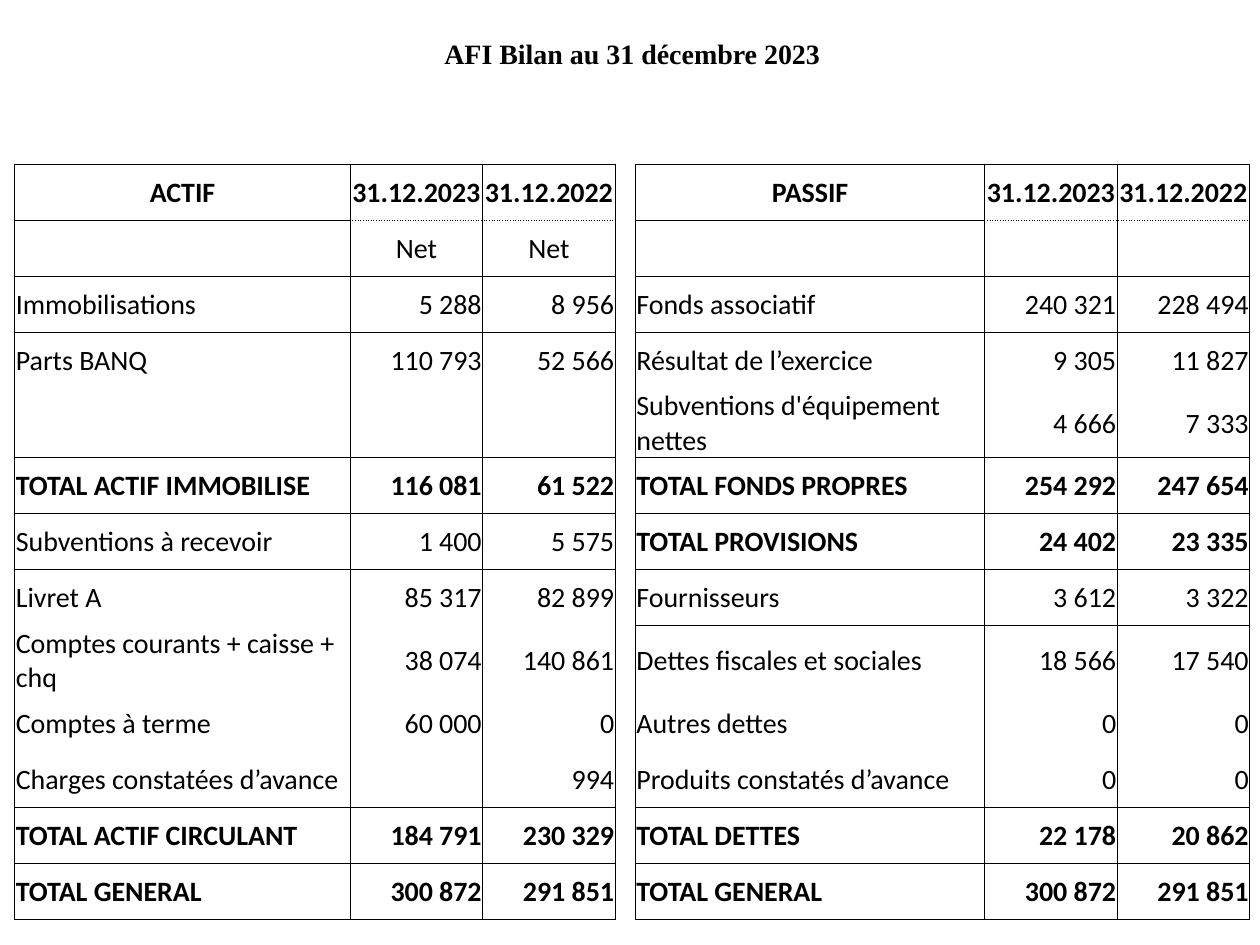
"""Build the two-sided balance sheet slide as one table."""
from lxml.etree import SubElement
from pptx import Presentation
from pptx.dml.color import RGBColor
from pptx.enum.text import MSO_ANCHOR as ANCHOR, PP_ALIGN as ALIGN
from pptx.oxml.ns import qn
from pptx.util import Cm, Pt

TITLE = "AFI Bilan au 31 décembre 2023"
ROWS = [
    ("ACTIF", "31.12.2023", "31.12.2022", "PASSIF", "31.12.2023", "31.12.2022"),
    ("", "Net", "Net", "", "", ""),
    ("Immobilisations", "5 288", "8 956", "Fonds associatif", "240 321", "228 494"),
    ("Parts BANQ", "110 793", "52 566", "Résultat de l’exercice", "9 305", "11 827"),
    ("", "", "", "Subventions d'équipement nettes", "4 666", "7 333"),
    ("TOTAL ACTIF IMMOBILISE", "116 081", "61 522", "TOTAL FONDS PROPRES", "254 292", "247 654"),
    ("Subventions à recevoir", "1 400", "5 575", "TOTAL PROVISIONS", "24 402", "23 335"),
    ("Livret A", "85 317", "82 899", "Fournisseurs", "3 612", "3 322"),
    ("Comptes courants + caisse + chq", "38 074", "140 861", "Dettes fiscales et sociales", "18 566", "17 540"),
    ("Comptes à terme", "60 000", "0", "Autres dettes", "0", "0"),
    ("Charges constatées d’avance", "", "994", "Produits constatés d’avance", "0", "0"),
    ("TOTAL ACTIF CIRCULANT", "184 791", "230 329", "TOTAL DETTES", "22 178", "20 862"),
    ("TOTAL GENERAL", "300 872", "291 851", "TOTAL GENERAL", "300 872", "291 851"),
]
WIDTHS = [6.76, 2.67, 2.67, 0.41, 7.04, 2.67, 2.67]
HEIGHTS = [1.47, 0.74, 0.74] + [1.13] * len(ROWS)
SIDES = [(0, {-1, 1, 4, 5, 10, 11, 12}), (4, {-1, 1, 4, 5, 6, 10, 11, 12})]
FIRST = 3
NO_GRID = "{2D5ABB26-0587-4C30-8999-92F81FD0307C}"
CELL = {"margin_left": Cm(0.02), "margin_right": Cm(0.02), "margin_top": Cm(0.02),
        "margin_bottom": 0, "vertical_anchor": ANCHOR.MIDDLE}


def add_border(cell, side, dash="solid"):
    """Draw a thin black border on one side of a cell."""
    ln = SubElement(cell._tc.get_or_add_tcPr(), qn(f"a:ln{side}"), w=str(Pt(0.5)))
    fill = SubElement(ln, qn("a:solidFill"))
    SubElement(fill, qn("a:srgbClr"), val="000000")
    SubElement(ln, qn("a:prstDash"), val=dash)


def write(cell, text, align, name="Calibri", bold=False):
    """Put one formatted line of text in a cell."""
    p = cell.text_frame.paragraphs[0]
    p.alignment = align
    r = p.add_run()
    r.text = text
    for key, value in {"name": name, "size": Pt(16), "bold": bold}.items():
        setattr(r.font, key, value)
    r.font.color.rgb = RGBColor.from_string("000000")


prs = Presentation()
prs.slide_width, prs.slide_height = Cm(25.4), Cm(19.05)
s = prs.slides.add_slide(prs.slide_layouts[6])
frame = s.shapes.add_table(len(HEIGHTS), len(WIDTHS), Cm(0.3), Cm(0.36),
                           Cm(sum(WIDTHS)), Cm(sum(HEIGHTS)))
tbl = frame.table
tbl.first_row = tbl.horz_banding = False
tbl._tbl.tblPr.find(qn("a:tableStyleId")).text = NO_GRID
for col, width in zip(tbl.columns, WIDTHS):
    col.width = Cm(width)
for row, height in zip(tbl.rows, HEIGHTS):
    row.height = Cm(height)

tbl.cell(0, 0).merge(tbl.cell(0, len(WIDTHS) - 1))
write(tbl.cell(0, 0), TITLE, ALIGN.CENTER, "Times New Roman", True)

for i, values in enumerate(ROWS):
    for start, ruled in SIDES:
        labels = values[:3] if start == 0 else values[3:]
        bold = i == 0 or labels[0].startswith("TOTAL")
        for j, text in enumerate(labels):
            cell = tbl.cell(FIRST + i, start + j)
            add_border(cell, "L")
            add_border(cell, "R")
            for side, line in (("T", i - 1), ("B", i)):
                if line in ruled:
                    add_border(cell, side)
                elif line == 0 and j > 0:
                    add_border(cell, side, "sysDot")
            if text:
                align = ALIGN.CENTER if i < 2 else ALIGN.RIGHT if j else ALIGN.LEFT
                write(cell, text, align, bold=bold)

for cell in tbl.iter_cells():
    for key, value in CELL.items():
        setattr(cell, key, value)
    cell.fill.background()
    if not cell.text:
        SubElement(cell.text_frame.paragraphs[0]._p, qn("a:endParaRPr"), sz="1200")

prs.save("out.pptx")
